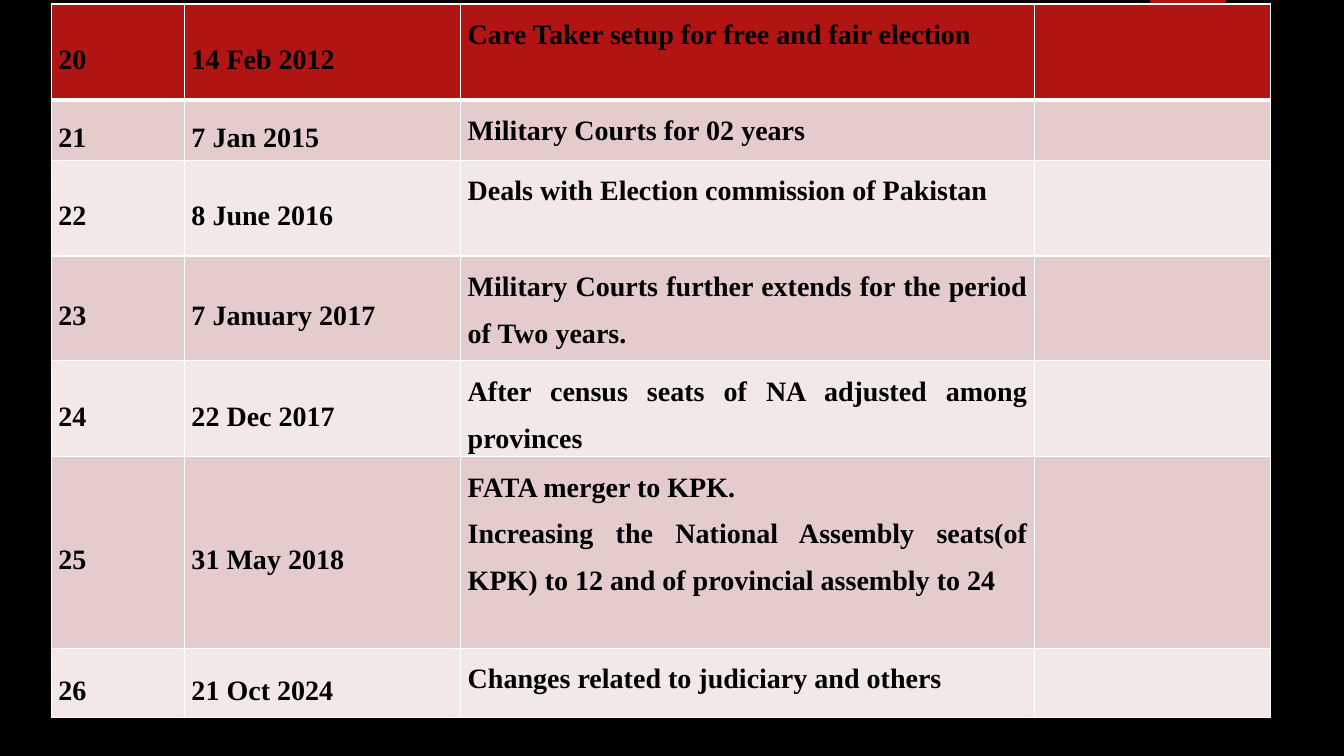
import pptx
import pptx.util
import pptx.dml.color
import pptx.enum.shapes
import pptx.enum.text
import pptx.oxml
import pptx.oxml.ns

Inches, Pt = pptx.util.Inches, pptx.util.Pt
RGB = pptx.dml.color.RGBColor.from_string
ANCHOR = pptx.enum.text.MSO_ANCHOR

AMENDMENTS = [
    ("20", "14 Feb 2012", "Care Taker setup for free and fair election", ""),
    ("21", "7 Jan 2015", "Military Courts for 02 years", ""),
    ("22", "8 June 2016", "Deals with Election commission of Pakistan", ""),
    ("23", "7 January 2017", "Military Courts further extends for the period of Two years.", ""),
    ("24", "22 Dec 2017", "After census seats of NA adjusted among provinces", ""),
    ("25", "31 May 2018", "FATA merger to KPK.\nIncreasing the National Assembly seats(of KPK) "
                          "to 12 and of provincial assembly to 24", ""),
    ("26", "21 Oct 2024", "Changes related to judiciary and others", ""),
]
COLUMN_WIDTHS = [1.32, 2.74, 5.69, 2.34]
ROW_HEIGHTS = [0.95, 0.6, 0.95, 1.04, 0.95, 1.9, 0.69]
COLORS = {"page": "000000", "text": "000000", "accent": "B01513", "line": "FFFFFF",
          "odd": "E4CCCC", "even": "F2E8E7"}
FONT = {"name": "Times New Roman", "size": Pt(20), "bold": True}
PARAGRAPH = {"alignment": pptx.enum.text.PP_ALIGN.JUSTIFY, "line_spacing": 1.5}
MARGINS = {"margin_left": Inches(0.07), "margin_right": Inches(0.07),
           "margin_top": 0, "margin_bottom": 0}


def apply(target, values):
    for name, value in values.items():
        setattr(target, name, value)


def set_borders(cell, widths):
    """Draw the cell's sides; widths maps L, R, T, B to points."""
    properties = cell._tc.get_or_add_tcPr()
    for side, width in widths.items():
        properties.append(pptx.oxml.parse_xml(
            f'<a:ln{side} {pptx.oxml.ns.nsdecls("a")} w="{Pt(width)}"><a:solidFill>'
            f'<a:srgbClr val="{COLORS["line"]}"/></a:solidFill></a:ln{side}>'))


def fill_cell(cell, text, row, column):
    set_borders(cell, {"L": 1, "R": 1, "T": 3 if row == 1 else 1, "B": 3 if row == 0 else 1})
    band = "accent" if row == 0 else "odd" if row % 2 else "even"
    cell.fill.solid()
    cell.fill.fore_color.rgb = RGB(COLORS[band])
    if not text:
        return
    apply(cell, MARGINS)
    cell.vertical_anchor = ANCHOR.MIDDLE if column < 2 else ANCHOR.TOP
    cell.text = text
    for para in cell.text_frame.paragraphs:
        apply(para, PARAGRAPH)
        for span in para.runs:
            apply(span.font, FONT)
            span.font.color.rgb = RGB(COLORS["text"])


def main():
    deck = pptx.Presentation()
    deck.slide_width, deck.slide_height = Inches(13.33), Inches(7.5)
    page = deck.slides.add_slide(deck.slide_layouts[6])
    page.background.fill.solid()
    page.background.fill.fore_color.rgb = RGB(COLORS["page"])

    ribbon = page.shapes.add_shape(pptx.enum.shapes.MSO_SHAPE.RECTANGLE,
                                   Inches(11.41), 0, Inches(0.75), Inches(1.25))
    ribbon.shadow.inherit = False
    ribbon.fill.solid()
    ribbon.fill.fore_color.rgb = RGB(COLORS["accent"])
    ribbon.line.fill.background()

    table = page.shapes.add_table(
        len(ROW_HEIGHTS), len(COLUMN_WIDTHS), Inches(0.51), Inches(0.04),
        Inches(sum(COLUMN_WIDTHS)), Inches(sum(ROW_HEIGHTS))).table
    for column, width in zip(table.columns, COLUMN_WIDTHS):
        column.width = Inches(width)
    for row, height in zip(table.rows, ROW_HEIGHTS):
        row.height = Inches(height)
    for row, amendment in enumerate(AMENDMENTS):
        for column, text in enumerate(amendment):
            fill_cell(table.cell(row, column), text, row, column)

    deck.save("out.pptx")


if __name__ == "__main__":
    main()
